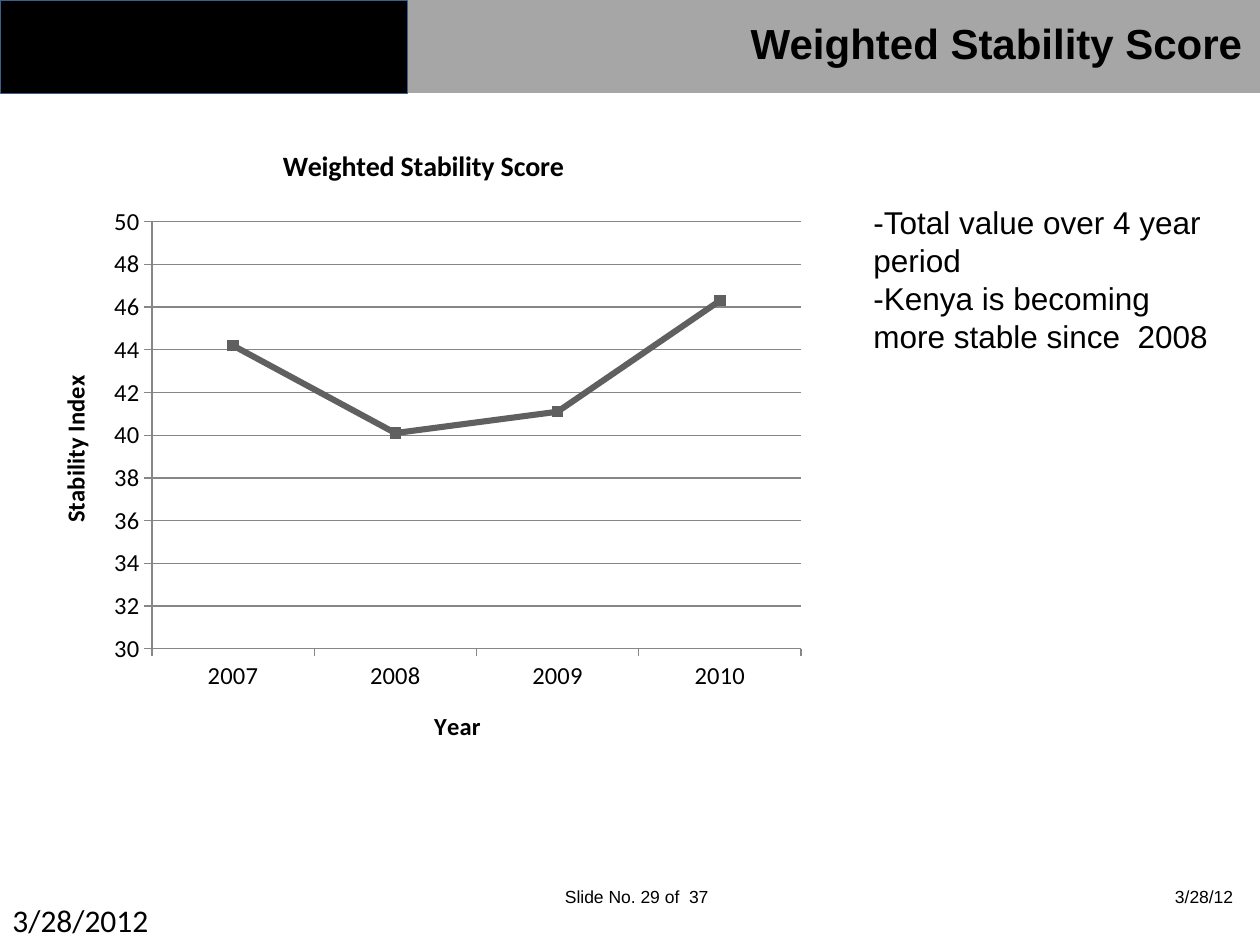
import pptx
import pptx.chart.data
import pptx.dml.color
import pptx.enum.chart
import pptx.enum.shapes
import pptx.enum.text
import pptx.util
import lxml.etree
from pptx.oxml.ns import qn

RGBColor = pptx.dml.color.RGBColor
BLACK = RGBColor(0x00, 0x00, 0x00)
BAND_GRAY = RGBColor(0xA6, 0xA6, 0xA6)
BAND_EDGE = RGBColor(0x3A, 0x5F, 0x8C)
GRID_GRAY = RGBColor(0x86, 0x86, 0x86)
LINE_GRAY = RGBColor(0x60, 0x60, 0x60)
EMU_PER_PX = 914400 / 126


def box(*lengths):
    return [pptx.util.Emu(round(length * EMU_PER_PX)) for length in lengths]


def style(font, size, name="Arial", bold=False):
    font.size = pptx.util.Pt(size)
    font.name = name
    font.bold = bold
    font.color.rgb = BLACK


deck = pptx.Presentation()
deck.slide_width, deck.slide_height = box(1260, 945)
slide = deck.slides.add_slide(deck.slide_layouts[5])
shapes = slide.shapes

# Header bands, kept behind the title
for index, (left, width, color) in enumerate([(0, 407, BLACK), (408, 852, BAND_GRAY)]):
    band = shapes.add_shape(pptx.enum.shapes.MSO_SHAPE.RECTANGLE, *box(left, 0, width, 93))
    band.shadow.inherit = False
    band.fill.solid()
    band.fill.fore_color.rgb = color
    if color == BLACK:
        band.line.color.rgb = BAND_EDGE
        band.line.width = pptx.util.Pt(0.25)
    else:
        band.line.fill.background()
    shapes._spTree.insert(2 + index, band._element)

# Title
title = shapes.title
title.left, title.top, title.width, title.height = box(406, 11, 849, 95)
title.text_frame.text = "Weighted Stability Score"
title.text_frame.vertical_anchor = pptx.enum.text.MSO_ANCHOR.TOP
heading = title.text_frame.paragraphs[0]
heading.alignment = pptx.enum.text.PP_ALIGN.RIGHT
style(heading.runs[0].font, 24, bold=True)

# Footer: slide number and date on tab stops
footer = shapes.add_textbox(*box(0, 880, 1260, 32)).text_frame
footer.margin_left = footer.margin_right = 0
footer.word_wrap = True
footer.vertical_anchor = pptx.enum.text.MSO_ANCHOR.MIDDLE
footer.text = "\tSlide No. 29 of  37\t3/28/12"
footer_line = footer.paragraphs[0]
tabs = lxml.etree.SubElement(footer_line._p.get_or_add_pPr(), qn("a:tabLst"))
for stop in box(565, 1175):
    lxml.etree.SubElement(tabs, qn("a:tab"), pos=str(stop), algn="l")
style(footer_line.runs[0].font, 10)

# Large date
date = shapes.add_textbox(*box(0, 895, 294, 50)).text_frame
date.word_wrap = True
date.text = "3/28/2012"
style(date.paragraphs[0].runs[0].font, 18, "Calibri")

# Stability chart
scores = pptx.chart.data.CategoryChartData()
scores.categories = ["2007", "2008", "2009", "2010"]
scores.add_series("Series 1", [44.2, 40.1, 41.1, 46.3])
chart = shapes.add_chart(
    pptx.enum.chart.XL_CHART_TYPE.LINE_MARKERS, *box(31, 122, 785, 648), scores
).chart
chart.has_legend = False
style(chart.font, 14, "Calibri")
chart.plots[0].vary_by_categories = False

trend = chart.plots[0].series[0]
trend.smooth = False
trend.format.line.color.rgb = LINE_GRAY
trend.format.line.width = pptx.util.Pt(3.5)
trend.marker.style = pptx.enum.chart.XL_MARKER_STYLE.SQUARE
trend.marker.size = 6
trend.marker.format.fill.solid()
trend.marker.format.fill.fore_color.rgb = LINE_GRAY
trend.marker.format.line.color.rgb = LINE_GRAY

years, index_axis = chart.category_axis, chart.value_axis
index_axis.minimum_scale = 30
index_axis.maximum_scale = 50
index_axis.major_unit = 2
index_axis.has_major_gridlines = True
index_axis.major_gridlines.format.line.color.rgb = GRID_GRAY
for axis in (years, index_axis):
    axis.format.line.color.rgb = GRID_GRAY
    axis.major_tick_mark = pptx.enum.chart.XL_TICK_MARK.OUTSIDE

for owner, caption, size in [
    (chart, "Weighted Stability Score", 16),
    (years, "Year", 14),
    (index_axis, "Stability Index", 14),
]:
    caption_frame = (owner.chart_title if owner is chart else owner.axis_title).text_frame
    caption_frame.text = caption
    style(caption_frame.paragraphs[0].runs[0].font, size, "Calibri", True)

# Plot area as fractions of the chart
plot_area = chart._chartSpace.chart.plotArea
for old_layout in plot_area.findall(qn("c:layout")):
    plot_area.remove(old_layout)
layout = lxml.etree.Element(qn("c:layout"))
plot_area.insert(0, layout)
manual = lxml.etree.SubElement(layout, qn("c:manualLayout"))
for tag, value in [
    ("layoutTarget", "inner"), ("xMode", "edge"), ("yMode", "edge"),
    ("x", "0.154"), ("y", "0.154"), ("w", "0.827"), ("h", "0.659"),
]:
    lxml.etree.SubElement(manual, qn("c:" + tag), val=value)

# Findings
findings = shapes.add_textbox(*box(861, 197, 378, 165)).text_frame
findings.word_wrap = True
findings.text = "-Total value over 4 year period\n-Kenya is becoming more stable since  2008"
for finding in findings.paragraphs:
    style(finding.runs[0].font, 18)

deck.save("out.pptx")
